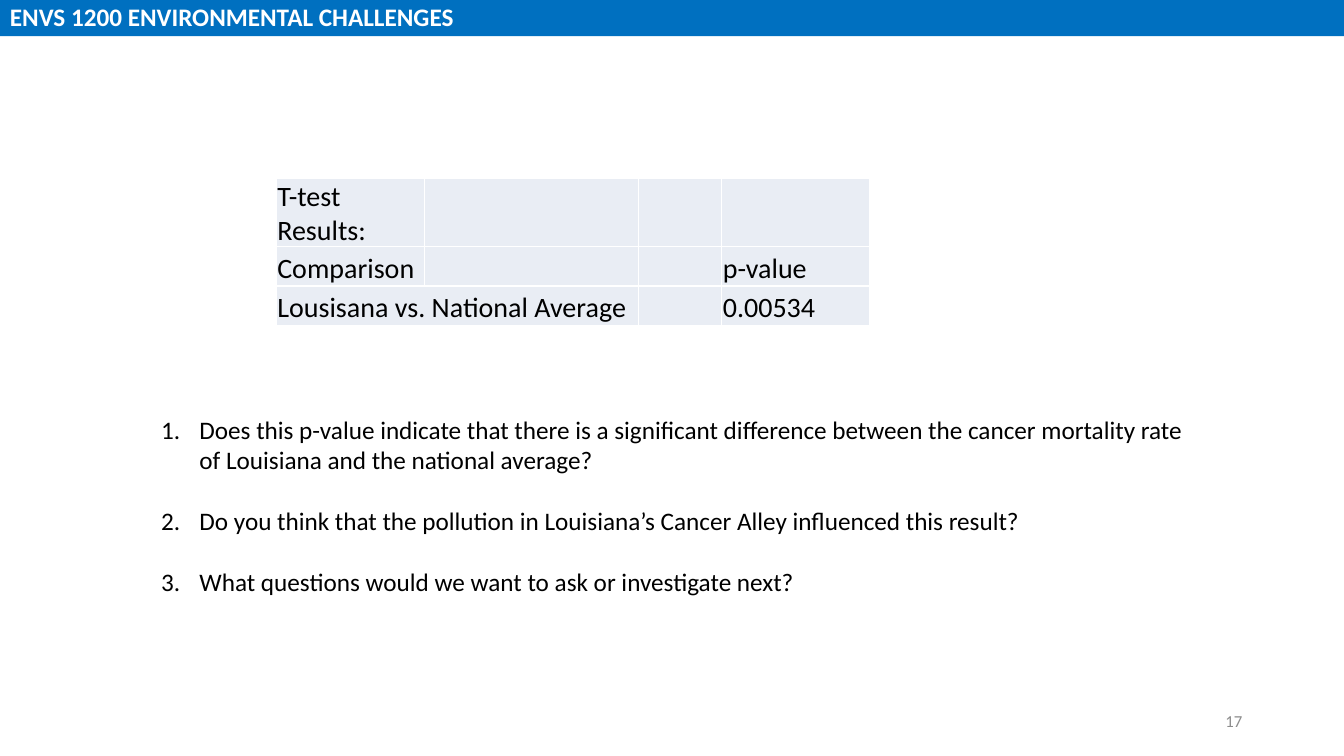
from dataclasses import dataclass

from lxml.etree import SubElement
from pptx import Presentation
from pptx.dml.color import RGBColor
from pptx.enum.shapes import MSO_SHAPE
from pptx.enum.text import MSO_ANCHOR, PP_ALIGN
from pptx.oxml.ns import qn
from pptx.util import Inches, Pt


@dataclass(frozen=True)
class Theme:
    font: str = "Calibri"
    band: str = "0070C0"
    cell: str = "E9EDF4"
    white: str = "FFFFFF"
    ink: str = "000000"
    grey: str = "8C8C8C"
    table_size: int = 20
    body_size: int = 18
    number_size: int = 12
    question_gap: int = 22


theme = Theme()


def write(paragraph, text, size, color, bold=False):
    paragraph.text = text
    font = paragraph.font
    font.name, font.size, font.bold = theme.font, Pt(size), bold
    font.color.rgb = RGBColor.from_string(color)


def add_borders(cell, color):
    properties = cell._tc.get_or_add_tcPr()
    for side in ("a:lnL", "a:lnR", "a:lnT", "a:lnB"):
        line = SubElement(properties, qn(side), w=str(Pt(1)))
        SubElement(SubElement(line, qn("a:solidFill")), qn("a:srgbClr"), val=color)


deck = Presentation()
deck.slide_width, deck.slide_height = Inches(13.33), Inches(7.5)
page = deck.slides.add_slide(deck.slide_layouts[6])

# Course band
band = page.shapes.add_shape(
    MSO_SHAPE.RECTANGLE, 0, Inches(-0.04), deck.slide_width, Inches(0.4))
band.shadow.inherit = False
band.fill.solid()
band.fill.fore_color.rgb = RGBColor.from_string(theme.band)
band.line.fill.background()
band.text_frame.vertical_anchor = MSO_ANCHOR.TOP
course = band.text_frame.paragraphs[0]
course.alignment = PP_ALIGN.LEFT
write(course, "ENVS 1200 ENVIRONMENTAL CHALLENGES", theme.body_size, theme.white, True)

# Page number
number_box = page.shapes.add_textbox(Inches(9.42), Inches(6.95), Inches(3), Inches(0.4))
number_box.text_frame.word_wrap = True
number_box.text_frame.vertical_anchor = MSO_ANCHOR.MIDDLE
number = number_box.text_frame.paragraphs[0]
number.alignment = PP_ALIGN.RIGHT
write(number, "17", theme.number_size, theme.grey)

# T-test results
results = [
    ["T-test Results:", "", "", ""],
    ["Comparison", "", "", "p-value"],
    ["Lousisana vs. National Average", "", "", "0.00534"],
]
column_widths = [1.47, 2.12, 0.83, 1.47]
row_heights = [0.67, 0.39, 0.39]
table = page.shapes.add_table(
    len(row_heights), len(column_widths), Inches(2.74), Inches(1.77),
    Inches(sum(column_widths)), Inches(sum(row_heights))).table
table.first_row = table.horz_banding = False
for column, width in zip(table.columns, column_widths):
    column.width = Inches(width)
for row, height, texts in zip(table.rows, row_heights, results):
    row.height = Inches(height)
    for cell, text in zip(row.cells, texts):
        add_borders(cell, theme.white)
        cell.fill.solid()
        cell.fill.fore_color.rgb = RGBColor.from_string(theme.cell)
        cell.margin_left = cell.margin_right = cell.margin_top = Inches(0.01)
        cell.margin_bottom = 0
        cell.vertical_anchor = MSO_ANCHOR.BOTTOM
        write(cell.text_frame.paragraphs[0], text, theme.table_size, theme.ink)
table.cell(2, 0).merge(table.cell(2, 1))

# Numbered questions
questions = [
    "Does this p-value indicate that there is a significant difference between "
    "the cancer mortality rate of Louisiana and the national average?",
    "Do you think that the pollution in Louisiana’s Cancer Alley influenced this result?",
    "What questions would we want to ask or investigate next?",
]
question_box = page.shapes.add_textbox(
    Inches(1.5), Inches(4.06), Inches(10.34), Inches(2.22))
frame = question_box.text_frame
frame.word_wrap = True
indent = Inches(0.38)
for index, question in enumerate(questions):
    para = frame.add_paragraph() if index else frame.paragraphs[0]
    write(para, question, theme.body_size, theme.ink)
    para.space_before = Pt(theme.question_gap if index else 0)
    properties = para._p.get_or_add_pPr()
    properties.set("marL", str(indent))
    properties.set("indent", str(-indent))
    bullet = properties.makeelement(qn("a:buAutoNum"), {"type": "arabicPeriod"})
    properties.find(qn("a:defRPr")).addprevious(bullet)

deck.save("out.pptx")
